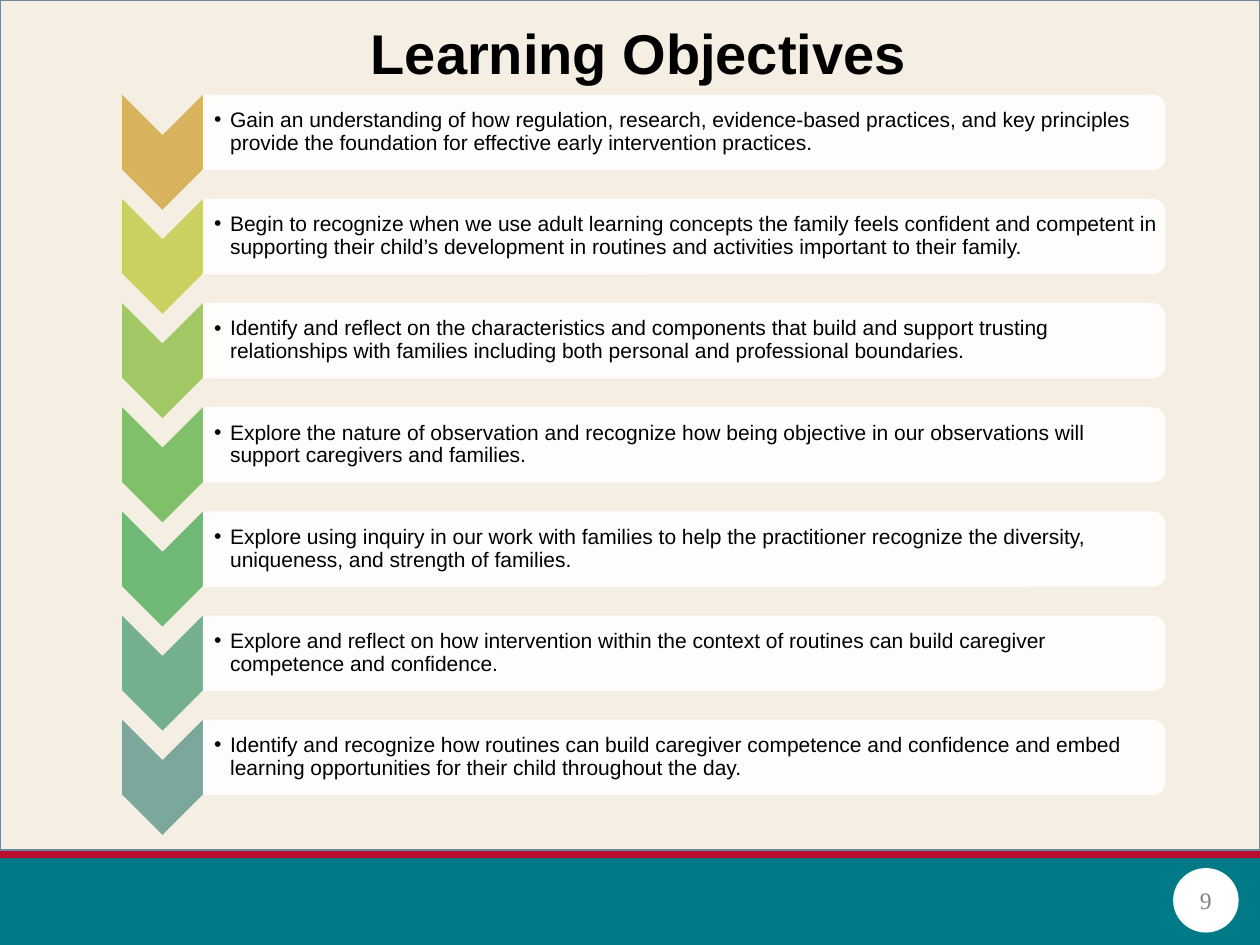
from lxml.etree import SubElement
from pptx import Presentation
from pptx.dml.color import RGBColor
from pptx.enum.shapes import MSO_SHAPE as Shape
from pptx.enum.text import MSO_ANCHOR as Anchor, MSO_AUTO_SIZE as AutoSize, PP_ALIGN as Align
from pptx.oxml.ns import qn
from pptx.util import Cm, Pt


def add_block(kind, left, top, width, height, color, opacity=100):
    block = page.shapes.add_shape(kind, Cm(left), Cm(top), Cm(width), Cm(height))
    block.shadow.inherit = False
    block.fill.solid()
    block.fill.fore_color.rgb = RGBColor.from_string(color)
    block.line.fill.background()
    if opacity < 100:
        tint = block.fill._xPr.find(".//" + qn("a:srgbClr"))
        SubElement(tint, qn("a:alpha"), val=str(opacity * 1000))
    return block


def write_text(box, text, color, font, frame_format, para_format):
    frame = box.text_frame
    for name, value in frame_format.items():
        setattr(frame, name, value)
    para = frame.paragraphs[0]
    for name, value in para_format.items():
        setattr(para, name, value)
    span = para.add_run()
    span.text = text
    for name, value in font.items():
        setattr(span.font, name, value)
    span.font.color.rgb = RGBColor.from_string(color)
    return para


deck = Presentation()
deck.slide_width, deck.slide_height = Cm(25.4), Cm(19.05)
page = deck.slides.add_slide(deck.slide_layouts[5])

add_block(Shape.RECTANGLE, 0, 17.3, 25.4, 1.75, "007A86")
add_block(Shape.RECTANGLE, 0, 17.12, 25.4, 0.18, "BA0C2F")
backdrop = add_block(Shape.RECTANGLE, 0, 0, 25.4, 17.14, "EBDDC3", 46)
backdrop.line.color.rgb = RGBColor.from_string("6D879B")
backdrop.line.width = Pt(1)

title = page.shapes.title
page.shapes._spTree.append(title._element)
title_place = {"left": Cm(4.39), "top": Cm(0.43), "width": Cm(16.97), "height": Cm(1.4)}
for name, value in title_place.items():
    setattr(title, name, value)
write_text(
    title, "Learning Objectives", "000000",
    {"name": "Arial", "size": Pt(32), "bold": True},
    {"vertical_anchor": Anchor.MIDDLE, "auto_size": AutoSize.NONE, "word_wrap": True},
    {"alignment": Align.CENTER, "line_spacing": 0.9},
)

badge = add_block(Shape.OVAL, 23.65, 17.5, 1.32, 1.3, "FFFFFF")
no_margins = dict.fromkeys(["margin_left", "margin_top", "margin_right", "margin_bottom"], 0)
write_text(
    badge, "9", "808080",
    {"name": "Times New Roman", "size": Pt(13.5)},
    {"vertical_anchor": Anchor.MIDDLE, **no_margins},
    {"alignment": Align.CENTER},
)

objectives = [
    ("D8B25C", "Gain an understanding of how regulation, research, evidence-based practices, and key principles provide the foundation for effective early intervention practices."),
    ("CCD061", "Begin to recognize when we use adult learning concepts the family feels confident and competent in supporting their child’s development in routines and activities important to their family."),
    ("A2C866", "Identify and reflect on the characteristics and components that build and support trusting relationships with families including both personal and professional boundaries."),
    ("81C06B", "Explore the nature of observation and recognize how being objective in our observations will support caregivers and families."),
    ("70B876", "Explore using inquiry in our work with families to help the practitioner recognize the diversity, uniqueness, and strength of families."),
    ("75B08E", "Explore and reflect on how intervention within the context of routines can build caregiver competence and confidence."),
    ("7BA79D", "Identify and recognize how routines can build caregiver competence and confidence and embed learning opportunities for their child throughout the day."),
]
first_top, row_step = 1.91, 2.1
chevron_length, chevron_width = 2.32, 1.63
bar_left, bar_length, bar_height = 4.09, 19.4, 1.52
item_frame = {
    "word_wrap": True, "vertical_anchor": Anchor.MIDDLE, "margin_left": Cm(0.23),
    "margin_top": Cm(0.03), "margin_right": Cm(0.03), "margin_bottom": Cm(0.03),
}

for row, (color, text) in enumerate(objectives):
    top = first_top + row * row_step
    turn = (chevron_length - chevron_width) / 2
    chevron = add_block(Shape.CHEVRON, 2.46 - turn, top + turn, chevron_length, chevron_width, color)
    chevron.rotation = 90

    turn = (bar_length - bar_height) / 2
    bar = add_block(Shape.ROUND_2_SAME_RECTANGLE, bar_left + turn, top - turn,
                    bar_height, bar_length, "FFFFFF", 90)
    bar.rotation = 90

    box = page.shapes.add_textbox(Cm(bar_left), Cm(top + 0.07), Cm(19.33), Cm(1.37))
    para = write_text(box, text, "000000", {"name": "Arial", "size": Pt(12)},
                      item_frame, {"line_spacing": 0.9})
    settings = para._p.get_or_add_pPr()
    settings.set("marL", str(Cm(0.32)))
    settings.set("indent", str(Cm(-0.32)))
    SubElement(settings, qn("a:buFont"), typeface="Arial")
    SubElement(settings, qn("a:buChar"), char="•")

deck.save("out.pptx")
